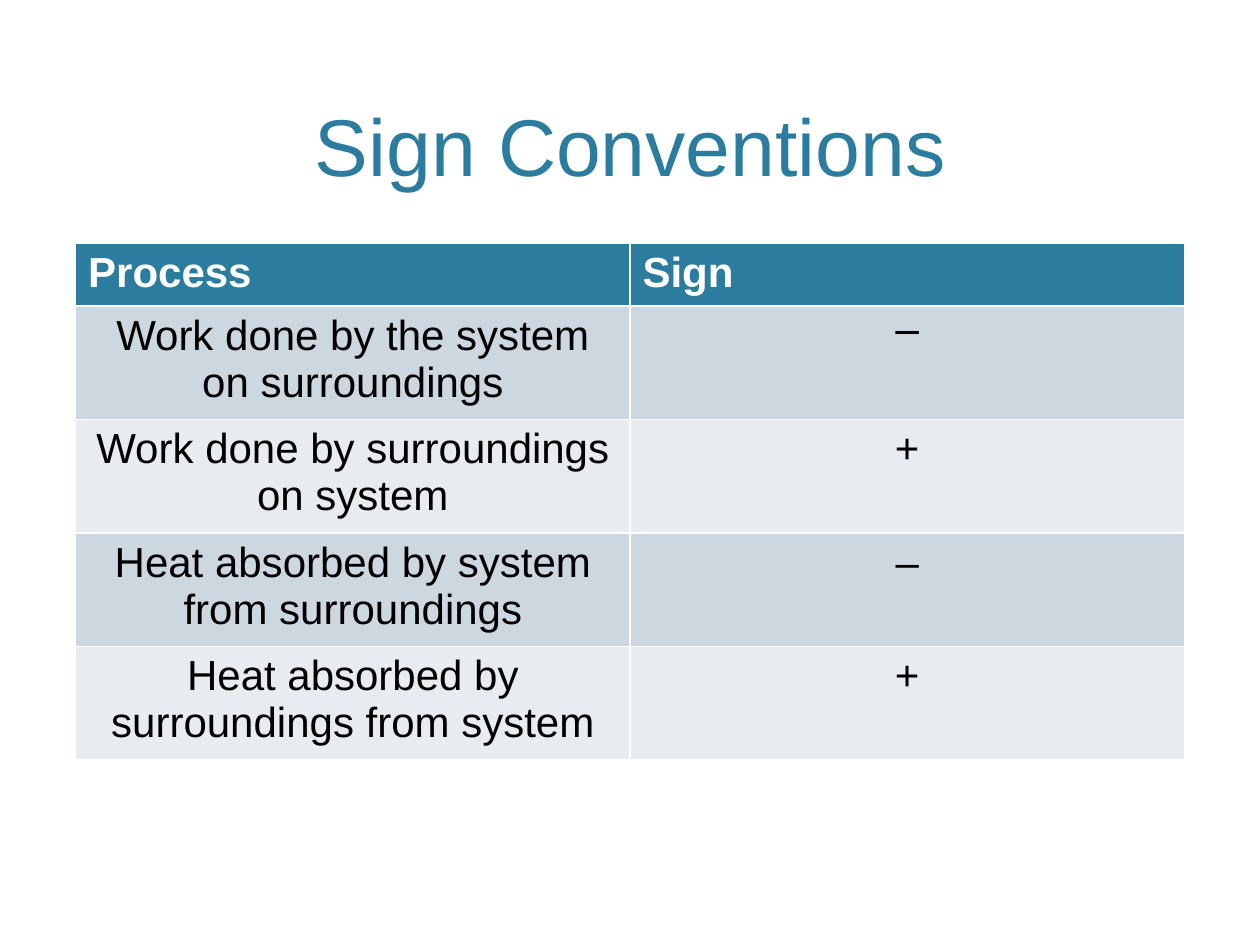
from pptx import Presentation
from pptx.dml.color import RGBColor
from pptx.enum.text import MSO_ANCHOR, PP_ALIGN
from pptx.util import Inches, Pt

COLORS = {
    "teal": "2C7C9F",
    "white": "FFFFFF",
    "black": "000000",
    "band_dark": "CDD7DF",
    "band_light": "E8ECF0",
}
BODY_FONT = "Arial"
MINUS_FONT = "TeX Gyre Adventor"

HEADINGS = ("Process", "Sign")
CONVENTIONS = [
    ("Work done by the system on surroundings", "−"),
    ("Work done by surroundings on system", "+"),
    ("Heat absorbed by system from surroundings", "–"),
    ("Heat absorbed by surroundings from system", "+"),
]


def color(name):
    return RGBColor.from_string(COLORS[name])


def style_paragraph(paragraph, size, ink, align, bold=False, face=BODY_FONT):
    paragraph.alignment = align
    font = paragraph.font
    font.name, font.size, font.bold = face, Pt(size), bold
    font.color.rgb = color(ink)


def add_title(slide, left, top, width, height):
    title = slide.shapes.add_textbox(left, top, width, height)
    frame = title.text_frame
    frame.word_wrap = True
    frame.vertical_anchor = MSO_ANCHOR.BOTTOM
    frame.text = "Sign Conventions"
    style_paragraph(frame.paragraphs[0], 46, "teal", PP_ALIGN.CENTER)


def fill_cell(cell, text, fill, **text_style):
    cell.fill.solid()
    cell.fill.fore_color.rgb = color(fill)
    cell.text = text
    style_paragraph(cell.text_frame.paragraphs[0], 24, **text_style)


def add_sign_table(slide, left, top, width, header_height, row_height):
    """Place the table; its default style draws the white cell borders."""
    height = header_height + row_height * len(CONVENTIONS)
    table = slide.shapes.add_table(
        len(CONVENTIONS) + 1, len(HEADINGS), left, top, width, height
    ).table
    for row in table.rows:
        row.height = row_height
    table.rows[0].height = header_height

    for col, heading in enumerate(HEADINGS):
        fill_cell(table.cell(0, col), heading, "teal",
                  ink="white", align=PP_ALIGN.LEFT, bold=True)
    for row, convention in enumerate(CONVENTIONS, start=1):
        band = "band_dark" if row % 2 else "band_light"
        for col, text in enumerate(convention):
            fill_cell(table.cell(row, col), text, band,
                      ink="black", align=PP_ALIGN.CENTER,
                      face=MINUS_FONT if text == "−" else BODY_FONT)


def main():
    prs = Presentation()
    prs.slide_width, prs.slide_height = Inches(10), Inches(7.5)
    slide = prs.slides.add_slide(prs.slide_layouts[6])
    left, width = Inches(0.6), Inches(8.8)
    add_title(slide, left, Inches(0.12), width, Inches(1.46))
    add_sign_table(slide, left, Inches(1.93), width, Inches(0.46), Inches(0.84))
    prs.save("out.pptx")


if __name__ == "__main__":
    main()
